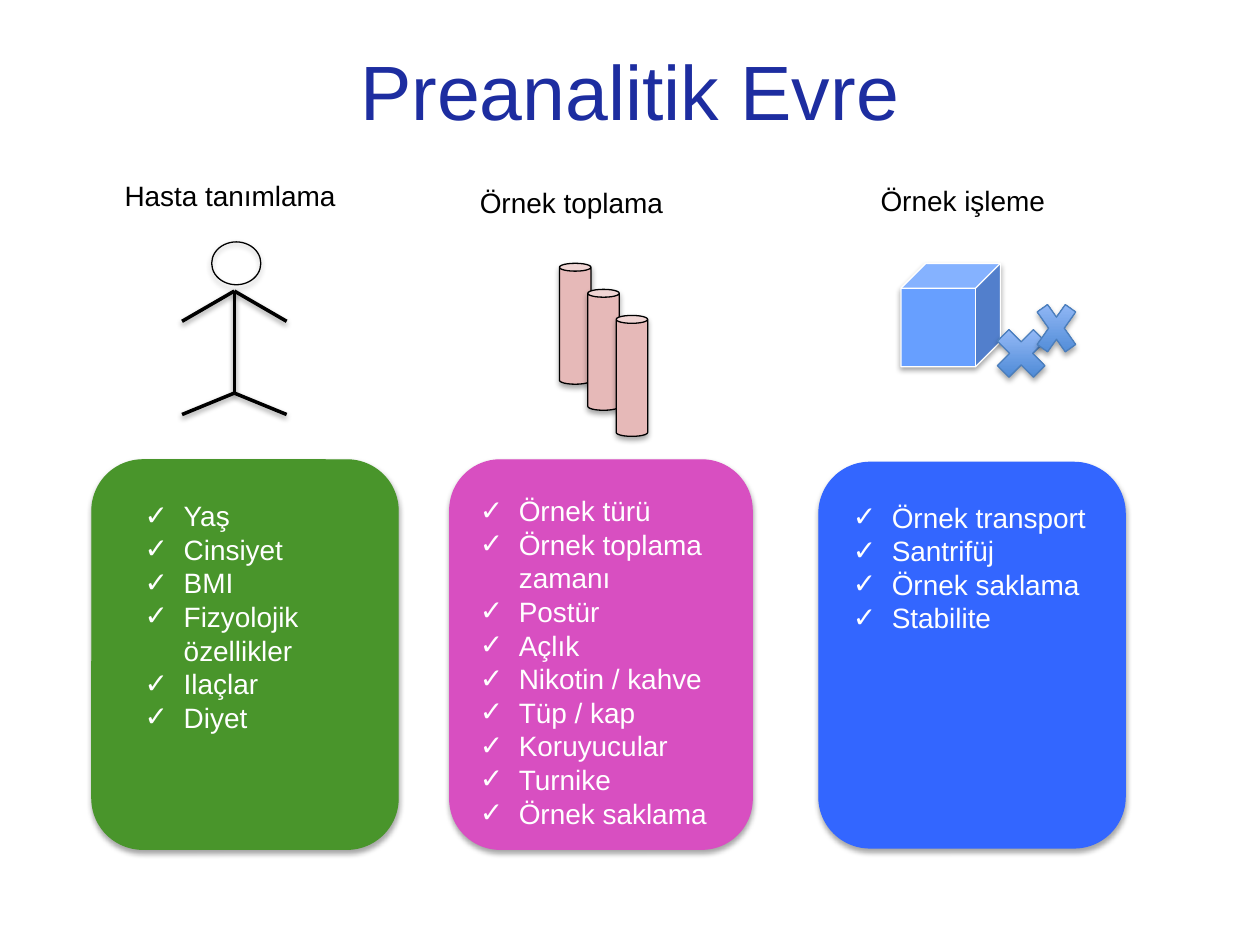
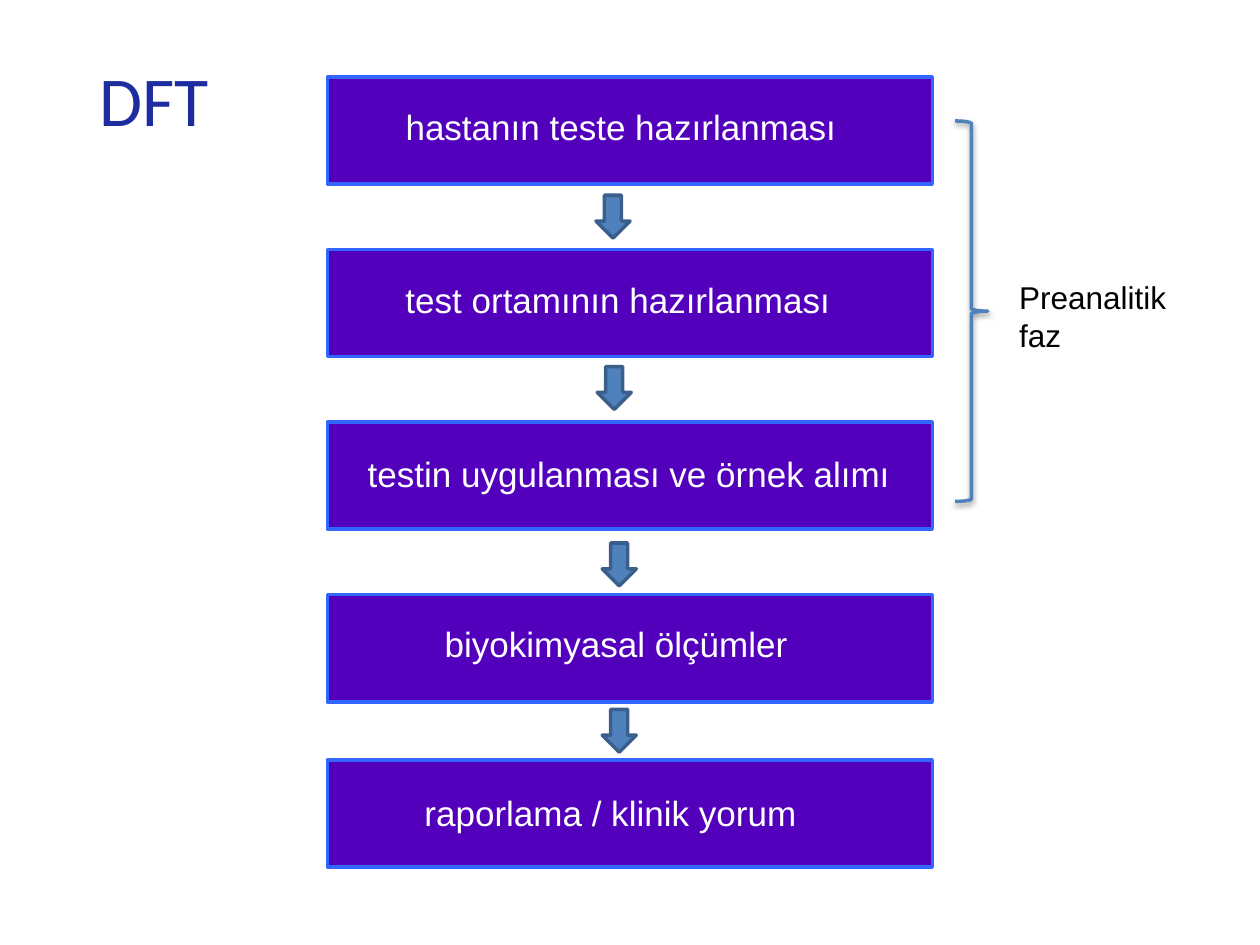
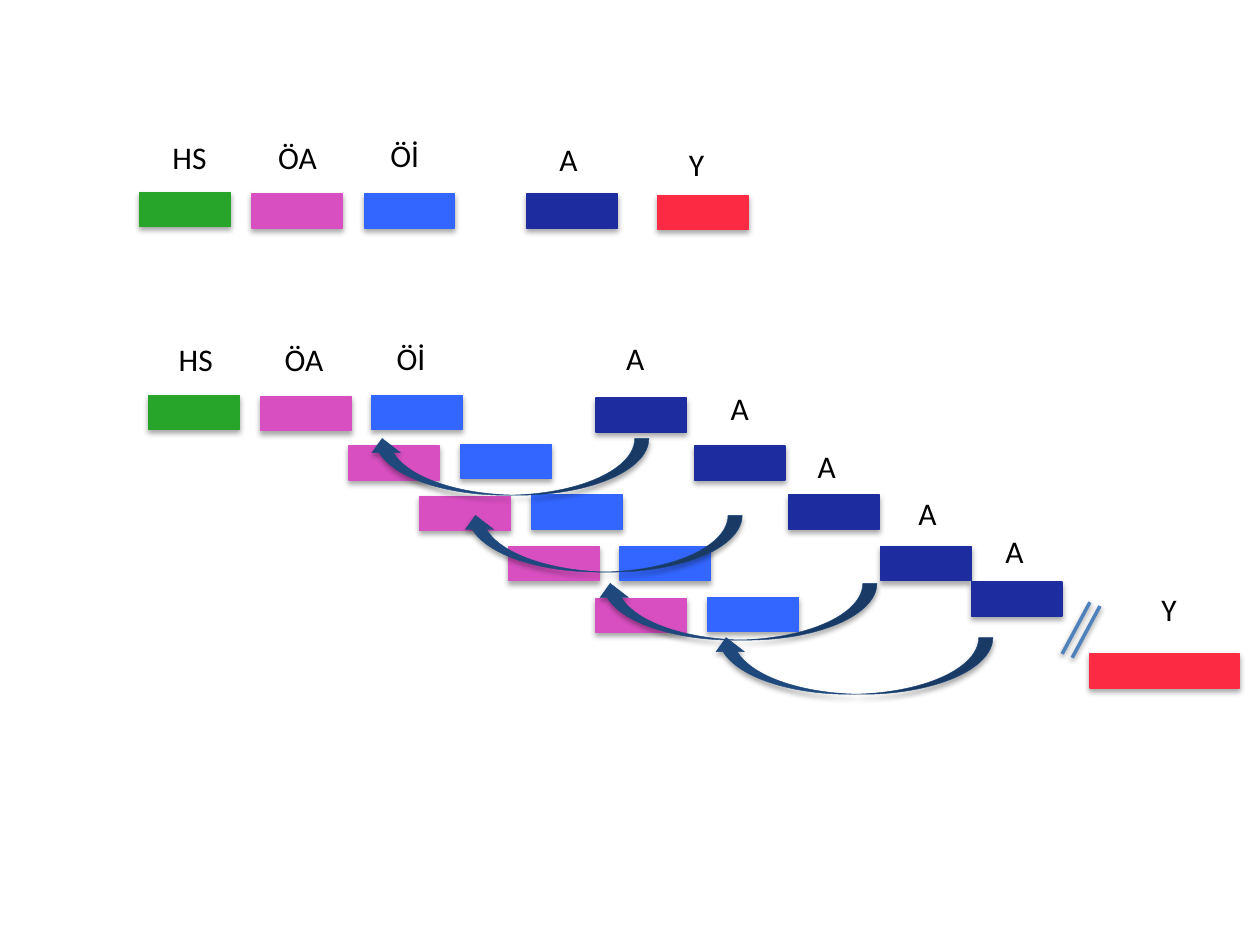
import pptx
import pptx.util
import pptx.oxml
import pptx.dml.color
import pptx.enum.shapes
import pptx.enum.text

COLS, ROWS = 100, 75
WIDE, HIGH = pptx.util.Inches(10), pptx.util.Inches(7.5)
FORM = pptx.enum.shapes.MSO_SHAPE
NS = 'xmlns:a="http://schemas.openxmlformats.org/drawingml/2006/main"'

NAVY, BLACK, WHITE = "1D2DA0", "000000", "FFFFFF"
PINK, BLUE, GREEN, RED = "D84FC1", "3366FF", "27A52B", "FC2A43"
MOSS, ROSE, SKY, STEEL = "49952B", "E6B9B8", "679FFF", "4F81BD"
VIOLET, SLATE, DEEP = "5300BD", "3A5F8C", "1F497D"
BLEND = ("3F80CE", "A4C4FF")

TITLE = {"name": "Arial", "size": pptx.util.Pt(44)}
HEAD = {"name": "Calibri", "size": pptx.util.Pt(40)}
STEP = {"name": "Arial", "size": pptx.util.Pt(20)}
NOTE = {"name": "Arial", "size": pptx.util.Pt(18)}
BODY = {"name": "Arial", "size": pptx.util.Pt(16)}
MARK = {"name": "Calibri", "size": pptx.util.Pt(18)}
SOFT = {"alpha": 35000, "blur": 40000, "dist": 23000}
THIN = {"alpha": 38000, "blur": 40000, "dist": 20000}


def col(n):
    return round(WIDE * n / COLS)


def row(n):
    return round(HIGH * n / ROWS)


def place(x, y, w, h):
    return col(x), row(y), col(w), row(h)


def tint(code):
    return pptx.dml.color.RGBColor.from_string(code)


def assign(item, style):
    for name, value in style.items():
        setattr(item, name, value)


def shade(item, cast):
    item._element.spPr.append(pptx.oxml.parse_xml(
        f'<a:effectLst {NS}><a:outerShdw blurRad="{cast["blur"]}" '
        f'dist="{cast["dist"]}" dir="5400000" rotWithShape="0">'
        f'<a:srgbClr val="000000"><a:alpha val="{cast["alpha"]}"/></a:srgbClr>'
        f'</a:outerShdw></a:effectLst>'))


def paint(fill, hue):
    if hue is None:
        fill.background()
    elif isinstance(hue, tuple):
        fill.gradient()
        fill.gradient_angle = 90
        for stop, code in zip(fill.gradient_stops, hue):
            stop.color.rgb = tint(code)
    else:
        fill.solid()
        fill.fore_color.rgb = tint(hue)


def stroke(item, hue, width):
    item.line.color.rgb = tint(hue)
    item.line.width = pptx.util.Pt(width)


def draw(slide, form, area, hue, edge, width=0.75, cast=SOFT, turn=0):
    item = slide.shapes.add_shape(form, *place(*area))
    item.rotation = turn
    paint(item.fill, hue)
    stroke(item, edge, width)
    if cast:
        shade(item, cast)
    else:
        item.shadow.inherit = False


def link(slide, start, end, hue):
    kind = pptx.enum.shapes.MSO_CONNECTOR.STRAIGHT
    item = slide.shapes.add_connector(
        kind, col(start[0]), row(start[1]), col(end[0]), row(end[1]))
    stroke(item, hue, 2)
    shade(item, THIN)


def bullet(para):
    props = para._p.get_or_add_pPr()
    indent = pptx.util.Inches(0.31)
    props.set("marL", str(indent))
    props.set("indent", str(-indent))
    props.append(pptx.oxml.parse_xml(f'<a:buFont {NS} typeface="Arial"/>'))
    props.append(pptx.oxml.parse_xml(f'<a:buChar {NS} char="✓"/>'))


def write(slide, lines, area, style, hue, wrap=False, ticks=False, align="LEFT"):
    frame = slide.shapes.add_textbox(*place(*area)).text_frame
    frame.word_wrap = wrap
    for i, line in enumerate(lines):
        para = frame.add_paragraph() if i else frame.paragraphs[0]
        para.alignment = getattr(pptx.enum.text.PP_ALIGN, align)
        run = para.add_run()
        run.text = line
        assign(run.font, style)
        run.font.color.rgb = tint(hue)
        if ticks:
            bullet(para)


def person(slide):
    draw(slide, FORM.OVAL, (16.8, 19.2, 3.9, 3.4), None, BLACK)
    mid, neck, hip = 18.6, 23.1, 31.2
    link(slide, (mid, neck), (mid, hip), BLACK)
    for top, drop in ((neck, 2.4), (hip, 1.7)):
        for side in (-4.15, 4.15):
            link(slide, (mid, top), (mid + side, top + drop), BLACK)


def phases(slide):
    cards = (
        (MOSS, (7.3, 36.5, 24.3, 30.9), "Hasta tanımlama", (8.9, 13.7, 19, 3.7),
         (10.5, 39.1, 21.8, 25.2),
         ("Yaş", "Cinsiyet", "BMI", "Fizyolojik özellikler", "Ilaçlar", "Diyet")),
        (PINK, (35.7, 36.5, 24, 30.9), "Örnek toplama", (37.1, 14.2, 16.7, 3.7),
         (37.1, 38.7, 21, 30.6),
         ("Örnek türü", "Örnek toplama zamanı", "Postür", "Açlık",
          "Nikotin / kahve", "Tüp / kap", "Koruyucular", "Turnike",
          "Örnek saklama")),
        (BLUE, (65, 36.7, 24.3, 30.6), "Örnek işleme", (68.9, 14.1, 15.2, 3.7),
         (66.7, 39.2, 22.7, 14.5),
         ("Örnek transport", "Santrifüj", "Örnek saklama", "Stabilite")))
    for hue, card, name, label, area, items in cards:
        draw(slide, FORM.ROUNDED_RECTANGLE, card, hue, hue)
        write(slide, [name], label, BODY, BLACK)
        write(slide, items, area, BODY, WHITE, wrap=True, ticks=True)
    person(slide)
    for i in range(3):
        tube = (44.4 + 2.25 * i, 20.9 + 2.07 * i, 2.5, 9.6)
        draw(slide, FORM.CAN, tube, ROSE, BLACK)
    draw(slide, FORM.CUBE, (71.5, 20.9, 7.9, 8.2), SKY, WHITE)
    for area in ((78.3, 25.3, 5.5, 5.5), (81.7, 23, 4.3, 6.1)):
        draw(slide, FORM.MATH_MULTIPLY, area, BLEND, "4B7EBC")
    write(slide, ["Preanalitik Evre"], (5, 3, 90, 12.5), TITLE, NAVY,
          wrap=True, align="CENTER")


def flow(slide):
    steps = (
        ("hastanın teste hazırlanması", 6.1, (31.2, 7.9, 36.5, 4.4)),
        ("test ortamının hazırlanması", 19.8, (31.2, 21.6, 36, 4.4)),
        ("testin uygulanması ve örnek alımı", 33.5, (28.2, 35.4, 43.8, 4.4)),
        ("biyokimyasal ölçümler", 47.2, (34.3, 48.9, 29.5, 4.4)),
        ("raporlama / klinik yorum", 60.3, (32.7, 62.3, 31.8, 4.4)))
    for text, top, area in steps:
        draw(slide, FORM.RECTANGLE, (26, top, 48, 8.5), VIOLET, BLUE, 2, None)
        write(slide, [text], area, STEP, WHITE)
    for x, y in ((47.3, 15.5), (47.4, 29.1), (47.8, 43.1), (47.8, 56.3)):
        draw(slide, FORM.DOWN_ARROW, (x, y, 2.7, 3.4), STEEL, SLATE, 2, None)
    write(slide, ["DFT"], (6.9, 4, 10.8, 7.7), HEAD, NAVY)
    draw(slide, FORM.RIGHT_BRACE, (75.8, 9.6, 2.6, 30.2), None, STEEL, 2, THIN)
    write(slide, ["Preanalitik", "faz"], (79.9, 21.6, 13.8, 7.1), NOTE, BLACK,
          wrap=True)


def cycle(slide):
    bars = {
        GREEN: ((11.1, 15.3), (11.8, 31.4)),
        PINK: ((20, 15.4), (20.7, 31.5), (27.7, 35.4), (33.3, 39.4),
               (40.4, 43.4), (47.3, 47.5)),
        BLUE: ((28.9, 15.4), (29.5, 31.4), (36.6, 35.3), (42.2, 39.3),
               (49.2, 43.4), (56.2, 47.4)),
        NAVY: ((41.8, 15.4), (47.3, 31.6), (55.1, 35.4), (62.6, 39.3),
               (69.9, 43.4), (77.1, 46.2)),
        RED: ((52.2, 15.5),)}
    for hue, spots in bars.items():
        for x, y in spots:
            draw(slide, FORM.RECTANGLE, (x, y, 7.2, 2.7), hue, hue)
    draw(slide, FORM.RECTANGLE, (86.5, 51.9, 11.9, 2.7), RED, RED)
    for x, y in ((86.5, 47.8), (87.3, 48.1)):
        link(slide, (x, y), (x - 2.2, y + 4.1), STEEL)
    for x, y in ((38.1, 25.9), (45.5, 32), (56.2, 37.4), (65.4, 41.7)):
        draw(slide, FORM.CURVED_LEFT_ARROW, (x, y, 4.5, 22.3), DEEP, DEEP,
             0.25, turn=90)
    marks = {
        ("HS", 4.8): ((12.7, 10.5), (13.2, 26.5)),
        ("ÖA", 5.2): ((21.1, 10.5), (21.6, 26.5)),
        ("Öİ", 4.3): ((30, 10.3), (30.5, 26.4)),
        ("A", 3.5): ((43.4, 10.6), (48.7, 26.4), (57, 30.4), (63.9, 35),
                     (71.9, 38.7), (78.8, 41.7)),
        ("Y", 3.3): ((53.7, 11), (91.2, 46.3))}
    for (text, width), spots in marks.items():
        for x, y in spots:
            write(slide, [text], (x, y, width, 4), MARK, BLACK)


def main():
    deck = pptx.Presentation()
    assign(deck, {"slide_width": WIDE, "slide_height": HIGH})
    for build in (phases, flow, cycle):
        build(deck.slides.add_slide(deck.slide_layouts[6]))
    deck.save("out.pptx")


if __name__ == "__main__":
    main()
